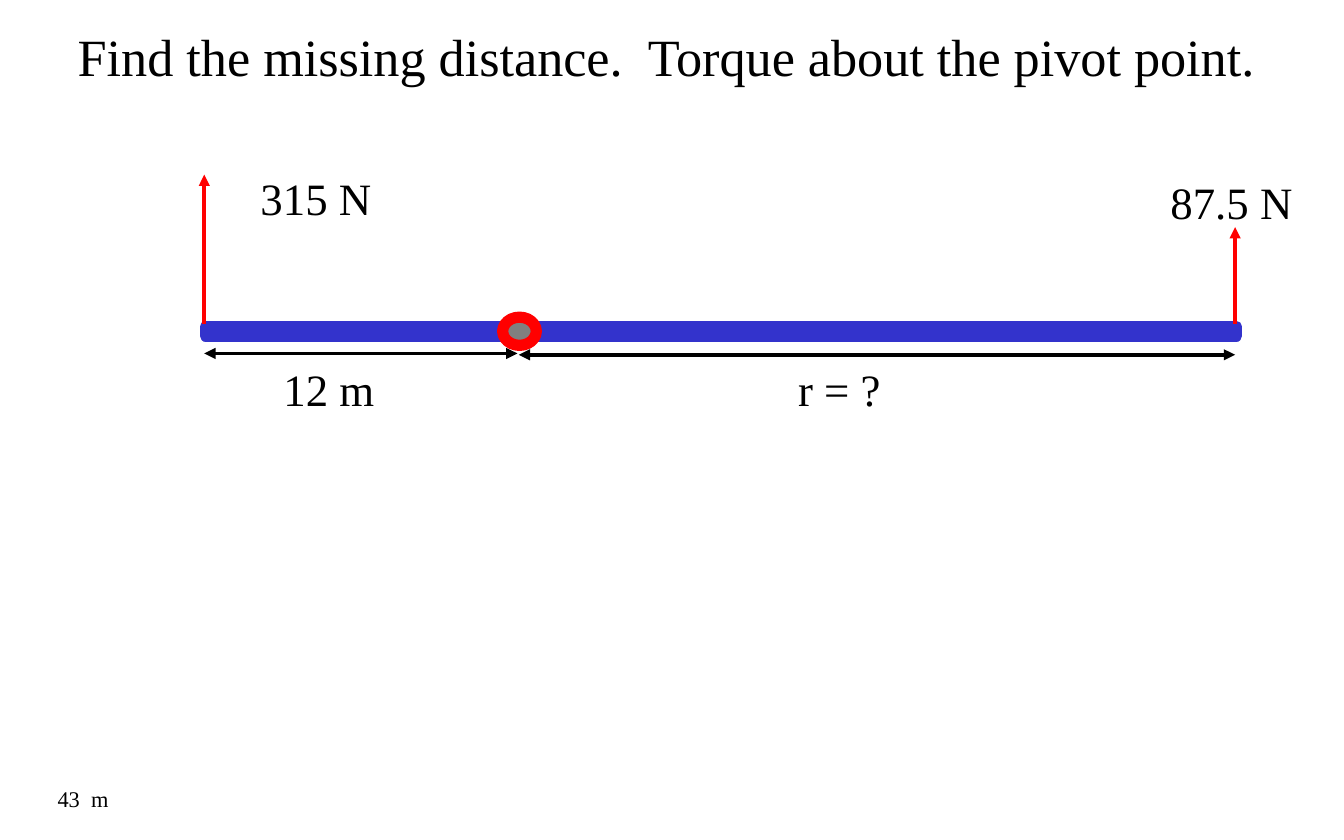
from dataclasses import dataclass

from lxml.etree import SubElement
from pptx import Presentation
from pptx.dml.color import RGBColor
from pptx.enum.shapes import MSO_CONNECTOR as Connector, MSO_SHAPE as Preset
from pptx.enum.text import MSO_AUTO_SIZE as AutoSize
from pptx.oxml.ns import qn
from pptx.util import Inches, Pt

COLORS = {"text": "000000", "force": "FF0000", "beam": "3333CC", "fill": "808080"}
FONT = "Times New Roman"
CELL = 0.1  # inches: the slide is 100 columns by 62.5 rows


@dataclass(frozen=True)
class Label:
    text: str
    col: float
    row: float
    cols: float
    rows: float = 5
    size: int = 24


@dataclass(frozen=True)
class Arrow:
    start: tuple[float, float]
    end: tuple[float, float]
    color: str
    double: bool = False


@dataclass(frozen=True)
class Body:
    preset: Preset
    col: float
    row: float
    cols: float
    rows: float
    outline: str


LEFT_END, PIVOT, RIGHT_END = 15.2, 38.6, 91.9
BEAM_TOP = 24.1

BODIES = [
    Body(Preset.RECTANGLE, 15.3, 24.3, 76.7, 0.7, "beam"),
    Body(Preset.OVAL, 37.4, 23.6, 2.5, 2.1, "force"),
]
ARROWS = [
    Arrow((LEFT_END, BEAM_TOP), (LEFT_END, 13), "force"),
    Arrow((RIGHT_END, BEAM_TOP), (RIGHT_END, 16.9), "force"),
    Arrow((LEFT_END, 26.3), (PIVOT - 0.1, 26.3), "text", double=True),
    Arrow((PIVOT, 26.4), (RIGHT_END, 26.4), "text", double=True),
]
LABELS = [
    Label("315 N", 18.4, 12.2, 10.3),
    Label("87.5 N", 86.1, 12.5, 11.2),
    Label("12 m", 20.1, 26.4, 8.8),
    Label("r = ?", 58.4, 26.4, 8.2),
    Label("Find the missing distance.  Torque about the pivot point.",
          4.8, 1.3, 90.5, rows=5.7, size=28),
    Label("43  m", 3.3, 57.9, 5.9, rows=3, size=12),
]


def grid(*cells: float) -> list[int]:
    return [Inches(cell * CELL) for cell in cells]


def rgb(name: str) -> RGBColor:
    return RGBColor.from_string(COLORS[name])


def add_body(page, body: Body) -> None:
    shape = page.shapes.add_shape(
        body.preset, *grid(body.col, body.row, body.cols, body.rows))
    shape.shadow.inherit = False
    shape.fill.solid()
    shape.fill.fore_color.rgb = rgb("fill")
    shape.line.color.rgb = rgb(body.outline)
    shape.line.width = Pt(6)


def add_arrow(page, arrow: Arrow) -> None:
    connector = page.shapes.add_connector(
        Connector.STRAIGHT, *grid(*arrow.start, *arrow.end))
    connector.line.color.rgb = rgb(arrow.color)
    connector.line.width = Pt(2)
    outline = connector.line._get_or_add_ln()
    for tag in ("a:headEnd", "a:tailEnd") if arrow.double else ("a:tailEnd",):
        SubElement(outline, qn(tag), type="triangle")
    SubElement(connector._element.spPr, qn("a:effectLst"))


def add_text(page, text: str, *, col: float, row: float, cols: float,
             rows: float, size: int, color: str = "text") -> None:
    box = page.shapes.add_textbox(*grid(col, row, cols, rows))
    frame = box.text_frame
    frame.word_wrap = False
    frame.auto_size = AutoSize.SHAPE_TO_FIT_TEXT
    span = frame.paragraphs[0].add_run()
    span.text = text
    span.font.name = FONT
    span.font.size = Pt(size)
    span.font.color.rgb = rgb(color)


def main() -> None:
    deck = Presentation()
    deck.slide_width, deck.slide_height = grid(100, 62.5)
    page = deck.slides.add_slide(deck.slide_layouts[6])
    for body in BODIES:
        add_body(page, body)
    for arrow in ARROWS:
        add_arrow(page, arrow)
    for label in LABELS:
        add_text(page, label.text, col=label.col, row=label.row,
                 cols=label.cols, rows=label.rows, size=label.size)
    deck.save("out.pptx")


if __name__ == "__main__":
    main()
